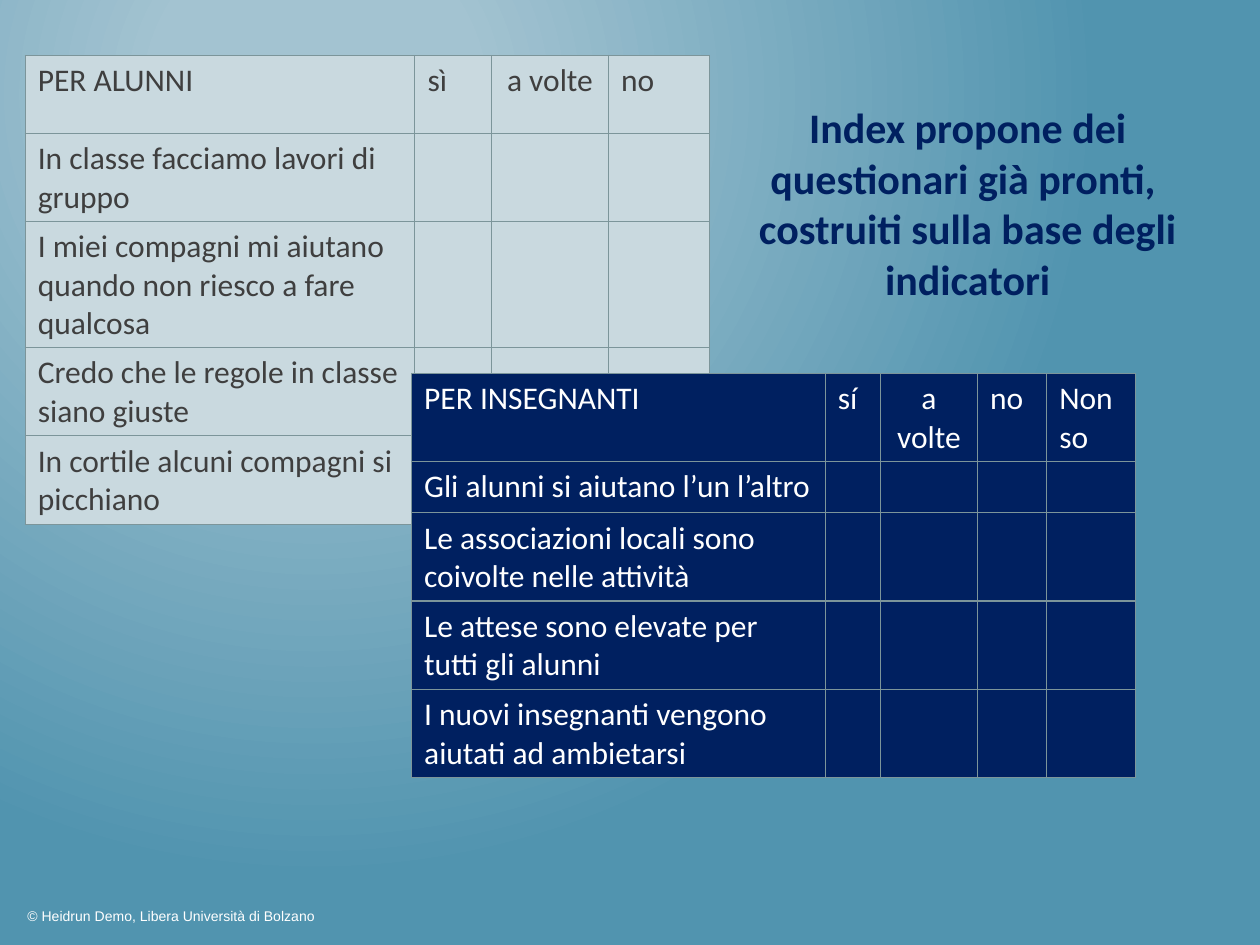
from lxml.etree import SubElement
from pptx import Presentation
from pptx.dml.color import RGBColor
from pptx.enum.text import PP_ALIGN
from pptx.oxml import parse_xml
from pptx.oxml.ns import nsdecls, qn
from pptx.util import Pt

# Content
HEADING = ["Index propone dei questionari già pronti, ",
           "costruiti sulla base degli indicatori"]
CREDIT = ["© Heidrun Demo, Libera Università di Bolzano"]
PUPILS = {
    "header": ["PER ALUNNI", "sì", "a volte", "no"],
    "statements": ["In classe facciamo lavori di gruppo",
                   "I miei compagni mi aiutano quando non riesco a fare qualcosa",
                   "Credo che le regole in classe siano giuste",
                   "In cortile alcuni compagni si picchiano"],
    "position": (14.4, 31.6),
    "columns": [222.7, 43.7, 67, 57.6],
    "rows": [44.6, 50.2, 72, 50.2, 50.2],
    "fill": "C9D9DF", "color": "3F3F3F",
}
TEACHERS = {
    "header": ["PER INSEGNANTI", "sí", "a volte", "no", "Non so"],
    "statements": ["Gli alunni si aiutano l’un l’altro",
                   "Le associazioni locali sono coivolte nelle attività",
                   "Le attese sono elevate per tutti gli alunni",
                   "I nuovi insegnanti vengono aiutati ad ambietarsi"],
    "position": (235.2, 213.4),
    "columns": [236.4, 31.6, 55.4, 39.6, 50.8],
    "rows": [50.2, 29.2, 50.2, 50.2, 50.2],
    "fill": "002060", "color": "FFFFFF",
}
CENTERED = "a volte"
BORDER = "7C959A"


def rgb(value):
    return RGBColor.from_string(value)


def style(paragraph, size, color, font="Calibri", bold=False, align=PP_ALIGN.LEFT):
    paragraph.alignment = align
    paragraph.font.name = font
    paragraph.font.size = Pt(size)
    paragraph.font.bold = bold
    paragraph.font.color.rgb = rgb(color)


def add_text(slide, box, lines, wrap, **look):
    frame = slide.shapes.add_textbox(*map(Pt, box)).text_frame
    frame.word_wrap = wrap
    frame.text = "\n".join(lines)
    for paragraph in frame.paragraphs:
        style(paragraph, **look)


def add_borders(cell):
    properties = cell._tc.get_or_add_tcPr()
    for side in ("lnL", "lnR", "lnT", "lnB"):
        line = SubElement(properties, qn("a:" + side), w=str(Pt(0.75)))
        SubElement(SubElement(line, qn("a:solidFill")), qn("a:srgbClr"), val=BORDER)


def add_questionnaire(slide, data):
    columns, rows = data["columns"], data["rows"]
    box = (*data["position"], sum(columns), sum(rows))
    table = slide.shapes.add_table(len(rows), len(columns), *map(Pt, box)).table
    table.first_row = table.horz_banding = False
    for column, width in zip(table.columns, columns):
        column.width = Pt(width)
    for row, height in zip(table.rows, rows):
        row.height = Pt(height)
    for index, text in enumerate(data["header"]):
        table.cell(0, index).text = text
    for index, text in enumerate(data["statements"], 1):
        table.cell(index, 0).text = text
    for cell in table.iter_cells():
        add_borders(cell)
        cell.fill.solid()
        cell.fill.fore_color.rgb = rgb(data["fill"])
        align = PP_ALIGN.CENTER if cell.text == CENTERED else PP_ALIGN.LEFT
        style(cell.text_frame.paragraphs[0], 18, data["color"], align=align)


presentation = Presentation()
presentation.slide_width, presentation.slide_height = Pt(720), Pt(540)
slide = presentation.slides.add_slide(presentation.slide_layouts[6])

# Radial background
slide._element.cSld.insert(0, parse_xml(
    f'<p:bg {nsdecls("p", "a")}><p:bgPr><a:gradFill rotWithShape="1"><a:gsLst>'
    '<a:gs pos="20000"><a:srgbClr val="A3C3D1"/></a:gs>'
    '<a:gs pos="100000"><a:srgbClr val="5194AF"/></a:gs></a:gsLst>'
    '<a:path path="circle"><a:fillToRect l="50000" t="20000" r="100000" b="100000"/>'
    '</a:path></a:gradFill><a:effectLst/></p:bgPr></p:bg>'))

# Heading and credit
add_text(slide, (416.9, 54.7, 272.2, 164.2), HEADING, True,
         size=24, color="002060", bold=True, align=PP_ALIGN.CENTER)
add_text(slide, (8.6, 514.8, 187.2, 17.3), CREDIT, False,
         size=8, color="FFFFFF", font="Arial")

# Questionnaires, the teachers' one in front
for questionnaire in (PUPILS, TEACHERS):
    add_questionnaire(slide, questionnaire)

presentation.save("out.pptx")
